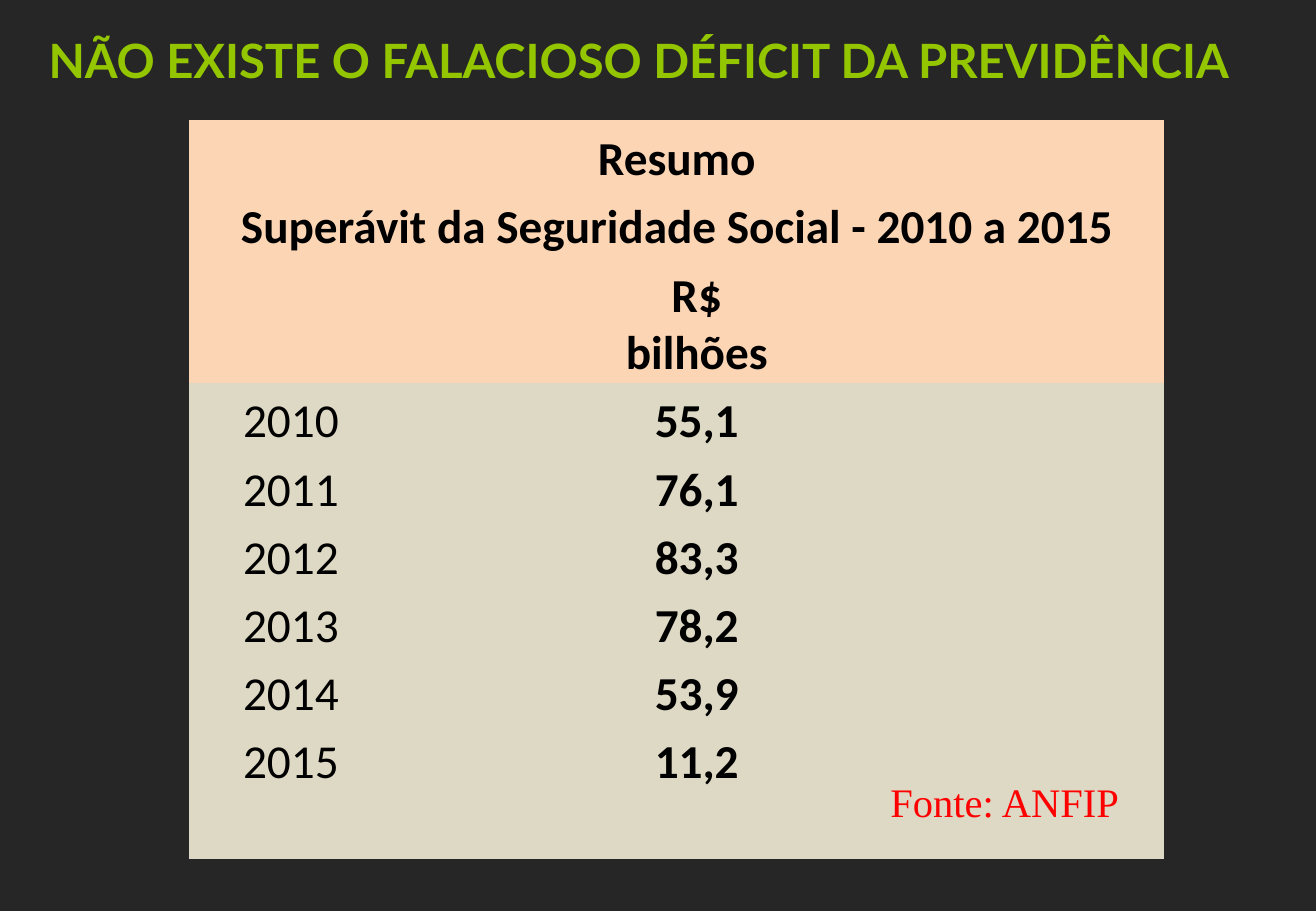
import dataclasses

import pptx
import pptx.dml.color
import pptx.enum.text
import pptx.oxml.ns
import pptx.util

COLORS = {
    "background": "262626",
    "title": "94C600",
    "header": "FCD5B4",
    "body": "DDD9C4",
    "text": "000000",
    "source": "FF0000",
}
SLIDE_WIDTH = pptx.util.Inches(10.83)
SLIDE_HEIGHT = pptx.util.Inches(7.5)
NO_STYLE_ID = "{2D5ABB26-0587-4C30-8999-92F81FD0307C}"

# Table grid, in percent of the slide's width and height
COLUMN, LAST_COLUMN = 15.42, 27.79
ROW, TALL_ROW = 7.47, 13.87
HEADER_ROWS = 3
COLUMN_WIDTHS = [COLUMN] * 3 + [LAST_COLUMN]
ROW_HEIGHTS = [ROW] * 2 + [TALL_ROW] + [ROW] * 7


@dataclasses.dataclass(frozen=True)
class Box:
    """A rectangle in percent of the slide's size."""
    left: float
    top: float
    width: float
    height: float

    def lengths(self) -> tuple[int, int, int, int]:
        return (across(self.left), down(self.top),
                across(self.width), down(self.height))


@dataclasses.dataclass(frozen=True)
class Style:
    font: str
    size: int
    color: str
    bold: bool = False


@dataclasses.dataclass(frozen=True)
class Entry:
    row: int
    column: int
    text: str
    bold: bool = True


SURPLUS = {"2010": "55,1", "2011": "76,1", "2012": "83,3",
           "2013": "78,2", "2014": "53,9", "2015": "11,2"}
HEADINGS = [
    Entry(0, 0, "Resumo"),
    Entry(1, 0, "Superávit da Seguridade Social - 2010 a 2015"),
    Entry(2, 2, "R$ bilhões"),
]


def across(percent: float) -> int:
    return round(SLIDE_WIDTH * percent / 100)


def down(percent: float) -> int:
    return round(SLIDE_HEIGHT * percent / 100)


def rgb(name: str) -> pptx.dml.color.RGBColor:
    return pptx.dml.color.RGBColor.from_string(COLORS[name])


def write(text_frame, text: str, style: Style, alignment) -> None:
    paragraph = text_frame.paragraphs[0]
    paragraph.alignment = alignment
    run = paragraph.add_run()
    run.text = text
    run.font.name = style.font
    run.font.size = pptx.util.Pt(style.size)
    run.font.bold = style.bold
    run.font.color.rgb = rgb(style.color)


def fill_text_shape(shape, box: Box, text: str, style: Style) -> None:
    shape.left, shape.top, shape.width, shape.height = box.lengths()
    text_frame = shape.text_frame
    text_frame.word_wrap = True
    text_frame.auto_size = pptx.enum.text.MSO_AUTO_SIZE.SHAPE_TO_FIT_TEXT
    text_frame.vertical_anchor = pptx.enum.text.MSO_ANCHOR.TOP
    write(text_frame, text, style, pptx.enum.text.PP_ALIGN.LEFT)


def write_cell(table, entry: Entry) -> None:
    cell = table.cell(entry.row, entry.column)
    cell.vertical_anchor = pptx.enum.text.MSO_ANCHOR.BOTTOM
    cell.margin_left = cell.margin_right = cell.margin_top = pptx.util.Inches(0.01)
    cell.margin_bottom = 0
    write(cell.text_frame, entry.text, Style("Calibri", 28, "text", entry.bold),
          pptx.enum.text.PP_ALIGN.CENTER)


def add_surplus_table(slide) -> None:
    box = Box(14.4, 13.2, sum(COLUMN_WIDTHS), sum(ROW_HEIGHTS))
    table = slide.shapes.add_table(
        len(ROW_HEIGHTS), len(COLUMN_WIDTHS), *box.lengths()).table
    table.first_row = table.horz_banding = False
    style_id = table._tbl.tblPr.find(pptx.oxml.ns.qn("a:tableStyleId"))
    style_id.text = NO_STYLE_ID

    # Grid and fills
    for column, width in zip(table.columns, COLUMN_WIDTHS):
        column.width = across(width)
    for index, (row, height) in enumerate(zip(table.rows, ROW_HEIGHTS)):
        row.height = down(height)
        for cell in row.cells:
            cell.fill.solid()
            cell.fill.fore_color.rgb = rgb("header" if index < HEADER_ROWS else "body")
    for index in range(2):
        table.cell(index, 0).merge(table.cell(index, len(COLUMN_WIDTHS) - 1))

    # Headings, years and values
    for heading in HEADINGS:
        write_cell(table, heading)
    for index, (year, value) in enumerate(SURPLUS.items(), HEADER_ROWS):
        write_cell(table, Entry(index, 0, year, bold=False))
        write_cell(table, Entry(index, 2, value))


def main() -> None:
    presentation = pptx.Presentation()
    presentation.slide_width = SLIDE_WIDTH
    presentation.slide_height = SLIDE_HEIGHT
    slide = presentation.slides.add_slide(presentation.slide_layouts[5])
    slide.background.fill.solid()
    slide.background.fill.fore_color.rgb = rgb("background")

    add_surplus_table(slide)

    # Title and source
    fill_text_shape(slide.shapes.title, Box(2.77, 2.8, 98.89, 7.6),
                    "NÃO EXISTE O FALACIOSO DÉFICIT DA PREVIDÊNCIA",
                    Style("Lato", 28, "title", bold=True))
    source_box = Box(66.76, 84.67, 33.33, 6.67)
    fill_text_shape(slide.shapes.add_textbox(*source_box.lengths()), source_box,
                    "Fonte: ANFIP", Style("Times New Roman", 24, "source"))

    presentation.save("out.pptx")


if __name__ == "__main__":
    main()
